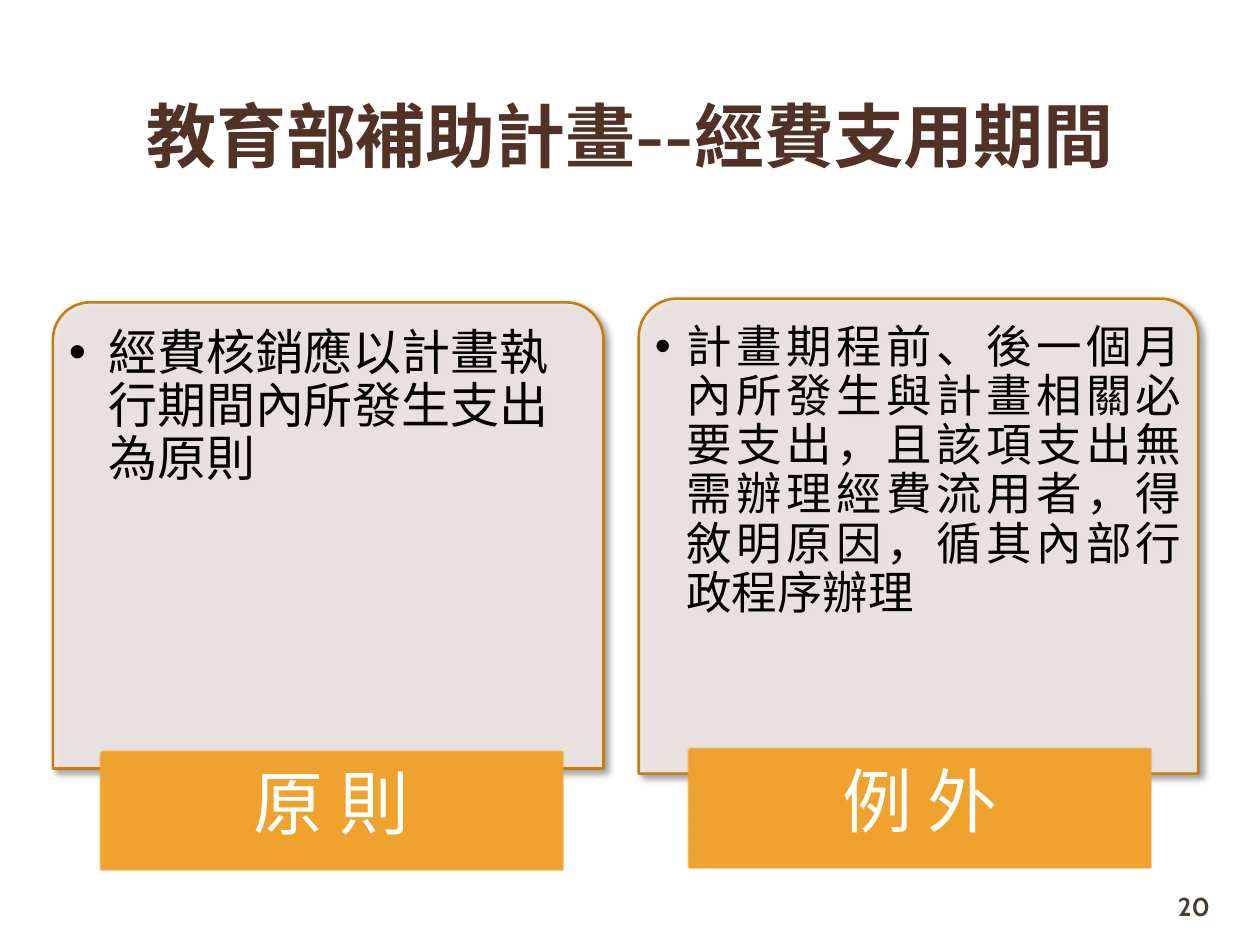
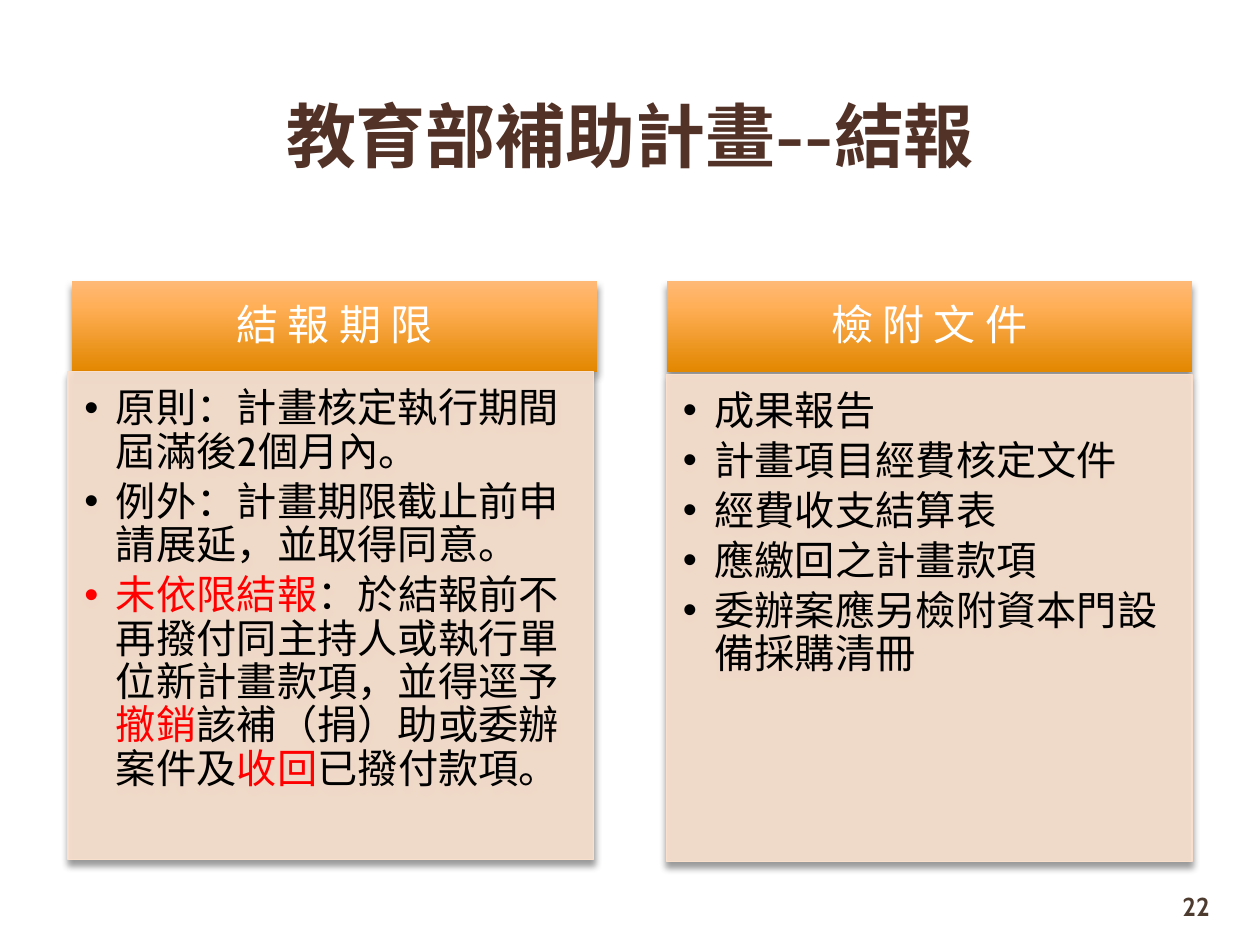
from copy import deepcopy

from lxml.etree import SubElement
from pptx import Presentation
from pptx.dml.color import RGBColor
from pptx.enum.shapes import MSO_SHAPE as Preset
from pptx.enum.text import MSO_ANCHOR as Anchor, PP_ALIGN as Align
from pptx.oxml.ns import qn
from pptx.util import Pt

BROWN = RGBColor(0x52, 0x32, 0x27)
NUMBER_BROWN = RGBColor(0x4E, 0x3B, 0x30)
BLACK = RGBColor(0, 0, 0)
WHITE = RGBColor(0xFF, 0xFF, 0xFF)
RED = RGBColor(0xFF, 0, 0)
CARD_FILL = RGBColor(0xF0, 0xE8, 0xE6)
CARD_LINE = RGBColor(0xC8, 0x7D, 0x0E)
LABEL_ORANGE = RGBColor(0xF0, 0xA2, 0x2E)
BODY_FILL = RGBColor(0xF9, 0xE0, 0xCD)
HEADER_STOPS = [(0, RGBColor(0xE2, 0x87, 0x00)),
                (0.72, RGBColor(0xFF, 0xAF, 0x57)),
                (1, RGBColor(0xFF, 0xB9, 0x77))]
LATIN, CJK = "Cabin", "Noto Sans CJK SC"


def write(shape, paragraphs, size, color, font=LATIN, bold=False, align=Align.LEFT,
          anchor=Anchor.MIDDLE, insets=(7.2, 3.6, 7.2, 3.6), indent=0, spacing=None):
    """Fill a shape with paragraphs, each a list of (text, color or None) runs."""
    frame = shape.text_frame
    frame.word_wrap = True
    frame.vertical_anchor = anchor
    frame.margin_left, frame.margin_top, frame.margin_right, frame.margin_bottom = map(Pt, insets)
    for index, runs in enumerate(paragraphs):
        paragraph = frame.add_paragraph() if index else frame.paragraphs[0]
        paragraph.alignment = align
        paragraph.line_spacing = spacing
        if indent:
            paragraph.space_after = Pt(size * 0.16)
            properties = paragraph._p.get_or_add_pPr()
            properties.set("marL", str(Pt(indent)))
            properties.set("indent", str(-Pt(indent)))
            SubElement(properties, qn("a:buFont"), typeface="Arial")
            SubElement(properties, qn("a:buChar"), char="•")
        for text, run_color in runs:
            run = paragraph.add_run()
            run.text = text
            run.font.name = font
            run.font.size = Pt(size)
            run.font.bold = bold
            run.font.color.rgb = run_color or color
            SubElement(run._r.rPr, qn("a:ea"), typeface=CJK)


def add_panel(slide, preset, box, fill=None, line=None, line_width=0, alpha=None,
              shadow=None):
    """Add a shape; shadow is (opacity in percent, direction in degrees)."""
    shape = slide.shapes.add_shape(preset, *map(Pt, box))
    shape.shadow.inherit = False
    if fill is not None:
        shape.fill.solid()
        shape.fill.fore_color.rgb = fill
    if line is None:
        shape.line.fill.background()
    else:
        shape.line.color.rgb = line
        shape.line.width = Pt(line_width)
    if alpha:
        color = shape._element.spPr.find(qn("a:solidFill"))[0]
        SubElement(color, qn("a:alpha"), val=str(alpha * 1000))
    if shadow:
        opacity, direction = shadow
        effects = shape._element.spPr.find(qn("a:effectLst"))
        outer = SubElement(effects, qn("a:outerShdw"), blurRad=str(Pt(4)), dist=str(Pt(3)),
                           dir=str(direction * 60000), rotWithShape="0")
        color = SubElement(outer, qn("a:srgbClr"), val="000000")
        SubElement(color, qn("a:alpha"), val=str(opacity * 1000))
    return shape


presentation = Presentation()
presentation.slide_width = Pt(720)
presentation.slide_height = Pt(540)

# Title and page number on both slides
slides = []
for title, number in [("教育部補助計畫--經費支用期間", "20"), ("教育部補助計畫--結報", "22")]:
    slide = presentation.slides.add_slide(presentation.slide_layouts[6])
    number_box = slide.shapes.add_textbox(Pt(629.28), Pt(506.16), Pt(69.12), Pt(23.04))
    write(number_box, [[(number, None)]], 14.8, NUMBER_BROWN, bold=True, align=Align.RIGHT)
    title_box = slide.shapes.add_textbox(Pt(21.6), Pt(34.56), Pt(676.8), Pt(84.24))
    write(title_box, [[(title, None)]], 40, BROWN, bold=True, align=Align.CENTER)
    title_box.text_frame.paragraphs[0].space_before = Pt(4)
    slides.append(slide)
period_slide, closing_slide = slides

# Spending period: a card with a label over its lower edge
cards = [
    ("原 則", "經費核銷應以計畫執行期間內所發生支出為原則",
     (30.24, 172.8, 314.64, 266.4), (57.6, 429.84), 28, 22.5, Align.LEFT),
    ("例 外", "計畫期程前、後一個月內所發生與計畫相關必要支出，且該項支出無需辦理經費流用者，"
     "得敘明原因，循其內部行政程序辦理",
     (365.04, 170.64, 319.68, 271.44), (393.84, 428.4), 26, 18, Align.JUSTIFY),
]
for label, text, card_box, label_corner, size, indent, align in cards:
    card = add_panel(period_slide, Preset.ROUND_2_SAME_RECTANGLE, card_box, CARD_FILL,
                     CARD_LINE, 1.5, alpha=90, shadow=(40, 45))
    card.adjustments[0] = 0.08
    card.adjustments[1] = 0
    write(card, [[(text, None)]], size, BLACK, font=CJK, align=align, anchor=Anchor.TOP,
          insets=(2.9, 8.4, 2.9, 2.9), indent=indent, spacing=0.9)
    tag = add_panel(period_slide, Preset.RECTANGLE, (*label_corner, 263.52, 66.96),
                    LABEL_ORANGE, LABEL_ORANGE, 3)
    SubElement(tag._element.spPr.find(qn("a:effectLst")), qn("a:softEdge"), rad=str(Pt(1)))
    write(tag, [[(label, None)]], 40, WHITE, align=Align.CENTER,
          insets=(0, 0, 0, 4), spacing=0.9)

# Closing report: a gradient header above a bulleted body
columns = [
    ("結 報 期 限", 41.04, (38.88, 212.4), [
        [("原則：計畫核定執行期間屆滿後2個月內。", None)],
        [("例外：計畫期限截止前申請展延，並取得同意。", None)],
        [("未依限結報", RED),
         ("：於結報前不再撥付同主持人或執行單位新計畫款項，並得逕予", None),
         ("撤銷", RED), ("該補（捐）助或委辦案件及", None),
         ("收回", RED), ("已撥付款項。", None)],
    ]),
    ("檢 附 文 件", 380.88, (380.88, 213.84), [
        [(item, None)] for item in (
            "成果報告", "計畫項目經費核定文件", "經費收支結算表",
            "應繳回之計畫款項", "委辦案應另檢附資本門設備採購清冊")
    ]),
]
for heading, header_left, body_corner, paragraphs in columns:
    header = add_panel(closing_slide, Preset.RECTANGLE, (header_left, 160.56, 300.24, 51.84),
                       shadow=(43, 90))
    header.fill.gradient()
    header.fill.gradient_angle = 90
    stop_list = header._element.spPr.find(qn("a:gradFill")).find(qn("a:gsLst"))
    stop_list.append(deepcopy(stop_list[0]))
    for stop, (position, color) in zip(header.fill.gradient_stops, HEADER_STOPS):
        stop.position = position
        stop.color.rgb = color
    write(header, [[(heading, None)]], 24, WHITE, align=Align.CENTER,
          insets=(13.7, 7.9, 13.7, 7.9), spacing=0.9)
    body = add_panel(closing_slide, Preset.RECTANGLE, (*body_corner, 300.24, 278.64),
                     BODY_FILL, BODY_FILL, 0.75, alpha=90, shadow=(43, 90))
    write(body, paragraphs, 23, BLACK, anchor=Anchor.TOP,
          insets=(9.4, 9.4, 13, 14.4), indent=18, spacing=0.9)

presentation.save("out.pptx")
